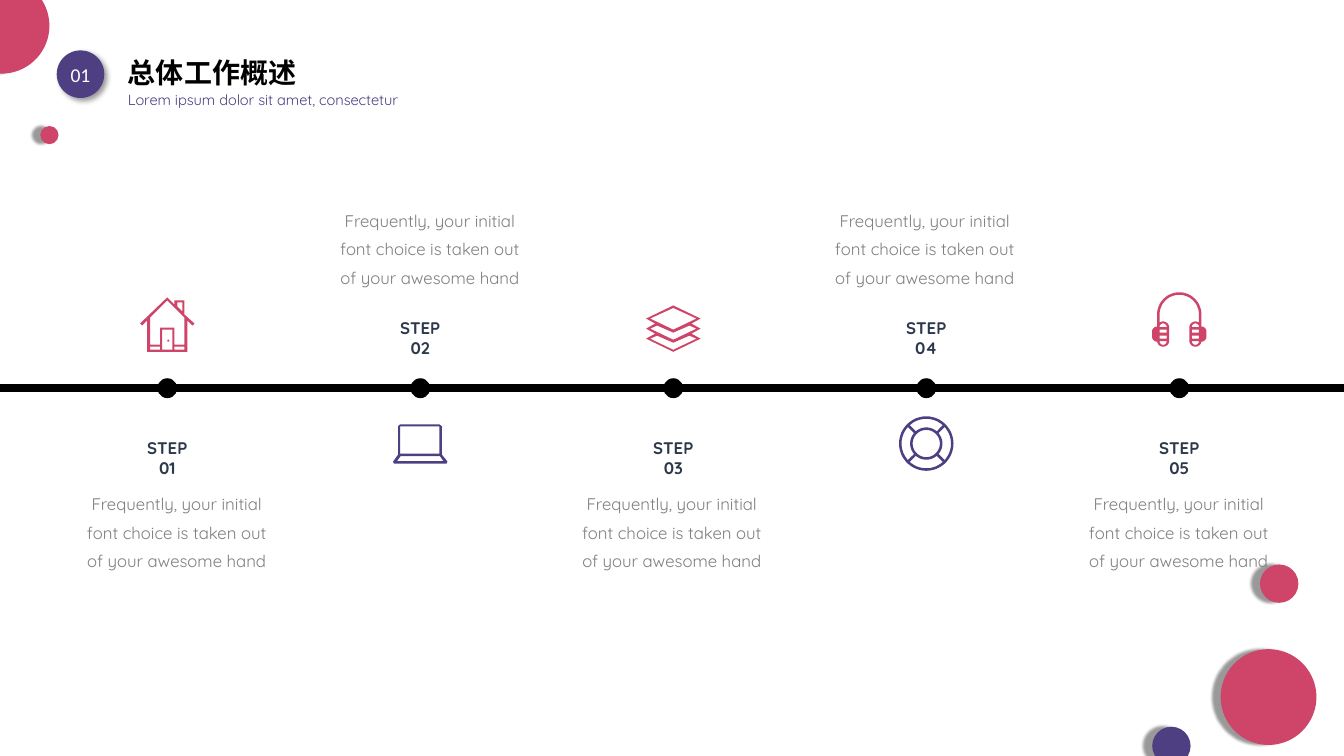
import math
from lxml import etree
from pptx import Presentation
from pptx.dml.color import RGBColor
from pptx.enum import shapes, text
from pptx.oxml import ns
from pptx.util import Pt

PINK = RGBColor(0xCE, 0x45, 0x69)
PURPLE = RGBColor(0x4D, 0x3F, 0x82)
BLACK = RGBColor(0, 0, 0)
WHITE = RGBColor(255, 255, 255)
SLATE = RGBColor(0x2C, 0x39, 0x4C)
GREY = RGBColor(0x7F, 0x7F, 0x7F)

WIDTH, HEIGHT = 960, 540
FIRST_STOP, STOP_GAP, TIMELINE_Y = 119.5, 180.72, 277.3
ICON_UNIT, ICON_WIDTH, FINENESS = 0.72, 54, 10
STEP_TEXT = "Frequently, your initial font choice is taken out of your awesome hand"


def arc(cx, cy, radius, start, end):
    count = max(8, int(abs(end - start) / 6))
    angles = [math.radians(start + (end - start) * i / count) for i in range(count + 1)]
    return [(cx + radius * math.cos(a), cy + radius * math.sin(a)) for a in angles]


def box(left, top, right, bottom):
    return [(left, top), (right, top), (right, bottom), (left, bottom)]


def house():
    return [
        [(54, 26), (44, 17), (44, 3), (34, 3), (34, 7), (27, 0), (0, 26), (2, 28),
         (7, 23), (7, 54), (47, 54), (47, 23), (52, 28)],
        [(44, 47), (34, 47), (34, 30), (20, 30), (20, 47), (10, 47), (10, 20), (27, 3), (44, 20)],
        box(34, 49, 44, 52), box(10, 49, 20, 52), box(22, 32, 32, 52),
        [(37, 5), (42, 5), (42, 14), (37, 9)],
        arc(28, 43, 1, 0, 360),
    ]


def laptop():
    return [
        [(5, 2), (7, 0), (46, 0), (48.5, 2), (48.5, 30), (54, 37), (53, 39), (1, 39), (0, 37), (5, 30)],
        box(7, 2, 46, 29),
        [(4, 36.5), (7.5, 31.5), (46.5, 31.5), (50, 36.5)],
    ]


def layers():
    right = [(54, 13), (45, 18), (54, 23), (45, 28), (54, 33)]
    left = [(54 - x, y) for x, y in reversed(right)]
    sheet = [(27, 34), (4, 23), (11, 20), (27, 27), (43, 20), (50, 23)]
    return [
        [(27, 0)] + right + [(27, 46)] + left,
        [(4, 13), (27, 2.5), (50, 13), (27, 24)],
        sheet,
        [(x, y + 10) for x, y in sheet],
    ]


def lifebuoy():
    panels = [arc(27, 27, 24.5, turn - 42, turn + 42) + arc(27, 27, 16, turn + 40.5, turn - 40.5)
              for turn in range(0, 360, 90)]
    return [arc(27, 27, 27, 0, 360), arc(27, 27, 13.5, 0, 360)] + panels


def headphones():
    def mirror(points):
        return [(54 - x, y) for x, y in reversed(points)]

    cup = ([(7.5, 22), (7.5, 30.5)] + arc(11, 35, 6, 240, 360) + arc(11, 48, 6, 0, 170)
           + arc(5, 44, 5, 90, 180) + arc(5, 39, 5, 180, 270) + [(5, 22)])
    band = arc(27, 22, 22, 180, 360)
    slots = [box(7.4, 37, 14.6, 40), box(7.4, 43, 14.6, 46),
             arc(11, 34.5, 3.6, 180, 360), arc(11, 48.5, 3.6, 0, 180)]
    return [cup + band + mirror(cup) + arc(27, 22, 19.5, 360, 180)] + slots + [mirror(s) for s in slots]


def add_icon(slide, contours, left, top, color):
    outlines = [[(x * FINENESS, y * FINENESS) for x, y in contour] for contour in contours]
    builder = slide.shapes.build_freeform(*outlines[0][0], scale=Pt(ICON_UNIT) / FINENESS)
    builder.add_line_segments(outlines[0][1:], close=True)
    for outline in outlines[1:]:
        builder.move_to(*outline[0])
        builder.add_line_segments(outline[1:], close=True)
    icon = builder.convert_to_shape(Pt(left), Pt(top))
    icon.shadow.inherit = False
    icon.fill.solid()
    icon.fill.fore_color.rgb = color
    icon.line.fill.background()


def add_shadow(shape, blur, distance, direction):
    effects = shape._element.spPr.find(ns.qn("a:effectLst"))
    shadow = etree.SubElement(effects, ns.qn("a:outerShdw"), blurRad=str(Pt(blur)), dist=str(Pt(distance)),
                              dir=str(direction * 60000), algn="ctr", rotWithShape="0")
    tint = etree.SubElement(shadow, ns.qn("a:srgbClr"), val=str(BLACK))
    etree.SubElement(tint, ns.qn("a:alpha"), val="40000")


def add_circle(slide, left, top, size, color):
    circle = slide.shapes.add_shape(shapes.MSO_SHAPE.OVAL, Pt(left), Pt(top), Pt(size), Pt(size))
    circle.shadow.inherit = False
    circle.fill.solid()
    circle.fill.fore_color.rgb = color
    circle.line.fill.background()
    return circle


def write(frame, words, size, color, font="Quicksand", bold=False, align=text.PP_ALIGN.LEFT):
    paragraph = frame.paragraphs[0]
    paragraph.alignment = align
    run = paragraph.add_run()
    run.text = words
    run.font.size = Pt(size)
    run.font.name = font
    run.font.bold = bold
    run.font.color.rgb = color
    return paragraph


def add_text(slide, left, top, width, height, words, size, color, **style):
    frame = slide.shapes.add_textbox(Pt(left), Pt(top), Pt(width), Pt(height)).text_frame
    frame.word_wrap = True
    return frame, write(frame, words, size, color, **style)


def add_heading(slide):
    title = slide.shapes.title
    title.left, title.top, title.width, title.height = Pt(84.2), Pt(36), Pt(135.4), Pt(31.5)
    title.text_frame.word_wrap = False
    title.text_frame.vertical_anchor = text.MSO_ANCHOR.TOP
    write(title.text_frame, "总体工作概述", 20, BLACK, font="Calibri", bold=True)
    add_text(slide, 84.2, 61.2, 267, 20.6, "Lorem ipsum dolor sit amet, consectetur", 10.5, PURPLE)


def add_badge(slide):
    badge = add_circle(slide, 40.5, 36, 34, PURPLE)
    add_shadow(badge, 4, 3, 45)
    frame = badge.text_frame
    frame.margin_left = frame.margin_right = frame.margin_top = frame.margin_bottom = 0
    frame.vertical_anchor = text.MSO_ANCHOR.MIDDLE
    write(frame, "01", 14, WHITE, font="Calibri", align=text.PP_ALIGN.CENTER)


def add_timeline(slide):
    timeline = slide.shapes.add_connector(shapes.MSO_CONNECTOR.STRAIGHT, 0, Pt(TIMELINE_Y),
                                          Pt(WIDTH), Pt(TIMELINE_Y))
    timeline.line.color.rgb = BLACK
    timeline.line.width = Pt(6)
    etree.SubElement(timeline._element.spPr, ns.qn("a:effectLst"))


def add_step(slide, number, icon, icon_top, text_left):
    center = FIRST_STOP + STOP_GAP * (number - 1)
    below = number % 2 == 1
    add_circle(slide, center - 7.1, TIMELINE_Y - 7.1, 14.2, BLACK)
    add_icon(slide, icon, center - ICON_WIDTH * ICON_UNIT / 2, icon_top, PINK if below else PURPLE)
    label, _ = add_text(slide, center - 28, 308 if below else 222.2, 56, 38, f"STEP {number:02}",
                        12, SLATE, bold=True, align=text.PP_ALIGN.CENTER)
    label.vertical_anchor = text.MSO_ANCHOR.MIDDLE
    body, paragraph = add_text(slide, text_left, 342.7 if below else 140.4, 149, 87, STEP_TEXT,
                               12, GREY, align=text.PP_ALIGN.CENTER)
    body.margin_left = body.margin_right = Pt(8.6)
    body.margin_top = body.margin_bottom = Pt(4.3)
    paragraph.line_spacing = Pt(20.2)
    paragraph.space_before = Pt(2.4)


def main():
    deck = Presentation()
    deck.slide_width, deck.slide_height = Pt(WIDTH), Pt(HEIGHT)
    slide = deck.slides.add_slide(deck.slide_layouts[5])
    add_heading(slide)
    bubbles = [(871.9, 463.7, 68.4, PINK), (900, 403.2, 27.4, PINK), (823, 519.1, 27.4, PURPLE),
               (-33.1, -15.8, 68.4, PINK), (28.8, 90, 13, PINK)]
    for left, top, size, color in bubbles:
        add_shadow(add_circle(slide, left, top, size, color), 2, 6, 180)
    add_badge(slide)
    add_timeline(slide)
    steps = [(house(), 212.4, 51.8), (laptop(), 303.1, 232.6), (layers(), 218.2, 405.4),
             (lifebuoy(), 297.4, 586.1), (headphones(), 208.8, 767.5)]
    for number, (icon, icon_top, text_left) in enumerate(steps, 1):
        add_step(slide, number, icon, icon_top, text_left)
    deck.save("out.pptx")


if __name__ == "__main__":
    main()
